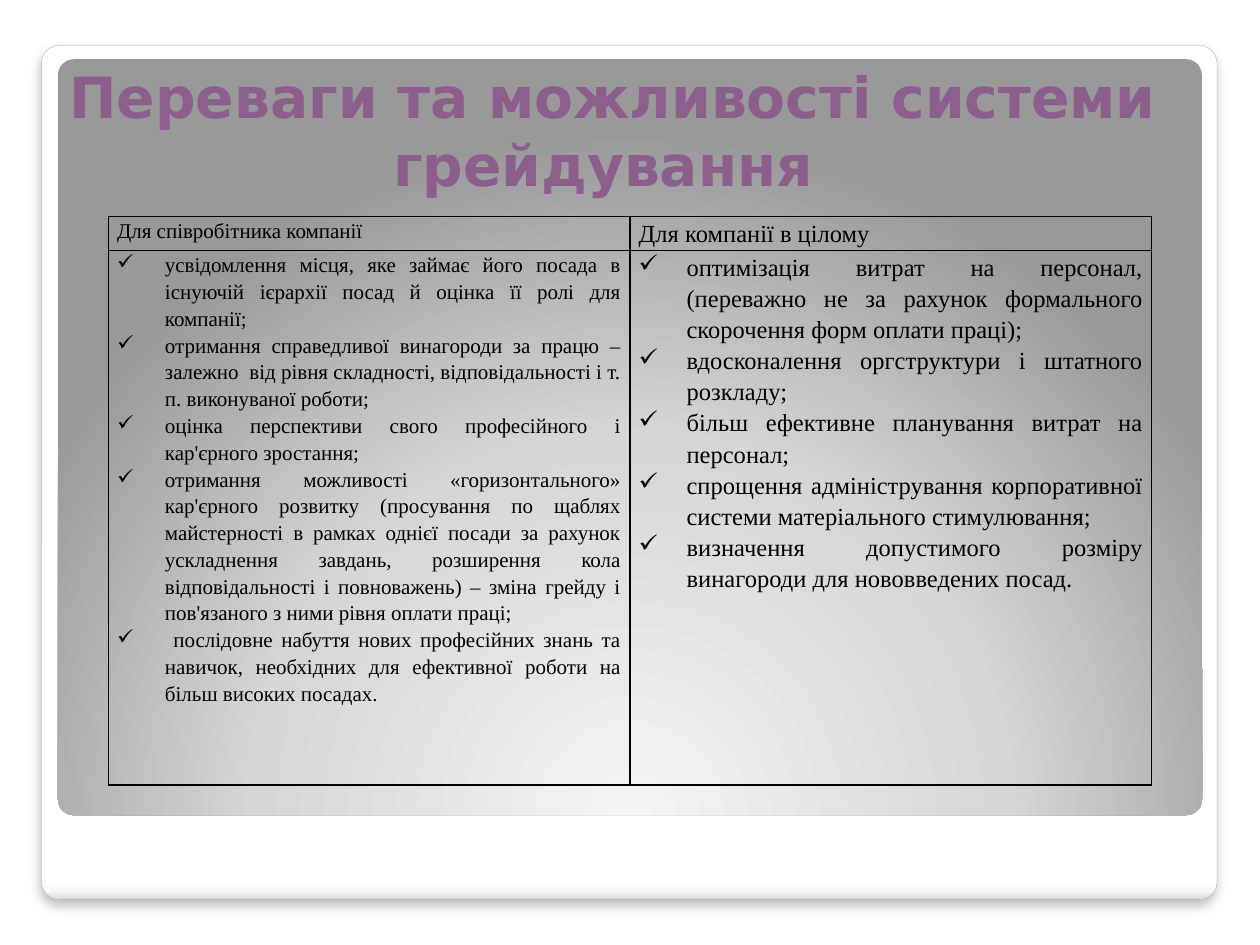
from lxml import etree
from pptx import Presentation
from pptx import util as u
from pptx.dml.color import RGBColor
from pptx.enum import shapes, text
from pptx.oxml import parse_xml
from pptx.oxml.ns import nsdecls, qn

TITLE = "Переваги та можливості системи грейдування "
COLUMNS = [
    {
        "heading": "Для співробітника компанії",
        "size": 12,
        "benefits": [
            "усвідомлення місця, яке займає його посада в існуючій ієрархії посад й оцінка її ролі для компанії; ",
            "отримання справедливої винагороди за працю – залежно  від рівня складності, відповідальності і т. п. виконуваної роботи;",
            "оцінка перспективи свого професійного і кар'єрного зростання;",
            "отримання можливості «горизонтального» кар'єрного розвитку (просування по щаблях майстерності в рамках однієї посади за рахунок ускладнення завдань, розширення кола відповідальності і повноважень) – зміна грейду і пов'язаного з ними рівня оплати праці;",
            " послідовне набуття нових професійних знань та навичок, необхідних для ефективної роботи на більш високих посадах.",
        ],
    },
    {
        "heading": "Для компанії в цілому",
        "size": 14,
        "benefits": [
            "оптимізація витрат на персонал, (переважно не за рахунок формального скорочення форм оплати праці); ",
            "вдосконалення оргструктури і штатного розкладу; ",
            "більш ефективне планування витрат на персонал; ",
            "спрощення адміністрування корпоративної системи матеріального стимулювання; ",
            "визначення допустимого розміру винагороди для нововведених посад.",
        ],
    },
]
PANELS = [
    {
        "at": (0.33, 0.36, 9.33, 6.78),
        "stops": [(0, "FFFFFF"), (98, "FFFFFF"), (99, "F7F7F7"), (100, "DADADA")],
        "direction": '<a:lin ang="5400000" scaled="0"/>',
        "outline": "A4A4A4",
    },
    {
        "at": (0.46, 0.47, 9.08, 6),
        "stops": [(0, "F5F5F5"), (55, "D6D6D6"), (100, "999999")],
        "direction": '<a:path path="circle"><a:fillToRect l="50000" t="175000" r="50000" b="-75000"/></a:path>',
        "outline": None,
    },
]
SHADOW = (
    f'<a:effectLst {nsdecls("a")}><a:outerShdw blurRad="{u.Pt(6)}" dist="{u.Pt(4)}" dir="5400000" '
    'algn="t" rotWithShape="0"><a:srgbClr val="000000"><a:alpha val="25000"/></a:srgbClr>'
    "</a:outerShdw></a:effectLst>"
)
ROW_HEIGHTS = [0.25, 4.24]
COLUMN_WIDTH = 4.14
INDENT = u.Inches(0.38)


def color(value):
    return RGBColor.from_string(value)


def inches(values):
    return [u.Inches(value) for value in values]


def apply(target, formats):
    for name, value in formats.items():
        setattr(target, name, value)


def write(paragraph, words, size, font, ink, bold=False):
    run = paragraph.add_run()
    run.text = words
    apply(run.font, {"size": u.Pt(size), "name": font, "bold": bold})
    run.font.color.rgb = color(ink)


def add_panel(slide, panel):
    card = slide.shapes.add_shape(shapes.MSO_SHAPE.ROUNDED_RECTANGLE, *inches(panel["at"]))
    card.adjustments[0] = 0.021
    card.shadow.inherit = False
    properties = card._element.spPr
    stops = "".join(
        f'<a:gs pos="{position * 1000}"><a:srgbClr val="{shade}"/></a:gs>'
        for position, shade in panel["stops"]
    )
    gradient = parse_xml(
        f'<a:gradFill {nsdecls("a")} rotWithShape="1"><a:gsLst>{stops}</a:gsLst>{panel["direction"]}</a:gradFill>'
    )
    properties.find(qn("a:prstGeom")).addnext(gradient)
    if panel["outline"]:
        card.line.color.rgb = color(panel["outline"])
        card.line.width = u.Pt(0.16)
        properties.replace(properties.find(qn("a:effectLst")), parse_xml(SHADOW))
    else:
        card.line.fill.background()


def add_borders(cell):
    properties = cell._tc.get_or_add_tcPr()
    for index, side in enumerate(("lnL", "lnR", "lnT", "lnB")):
        border = parse_xml(
            f'<a:{side} {nsdecls("a")} w="{u.Pt(1)}"><a:solidFill><a:srgbClr val="000000"/></a:solidFill></a:{side}>'
        )
        properties.insert(index, border)


def fill_cell(cell, lines, size, bulleted):
    apply(cell, {
        "margin_left": u.Inches(0.07), "margin_right": u.Inches(0.07),
        "margin_top": 0, "margin_bottom": 0,
    })
    cell.fill.background()
    add_borders(cell)
    frame = cell.text_frame
    for index, line in enumerate(lines):
        paragraph = frame.add_paragraph() if index else frame.paragraphs[0]
        paragraph.line_spacing = 1.15
        if bulleted:
            paragraph.alignment = text.PP_ALIGN.JUSTIFY
            properties = paragraph._p.get_or_add_pPr()
            properties.set("marL", str(INDENT))
            properties.set("indent", str(-INDENT))
            etree.SubElement(properties, qn("a:buChar")).set("char", "✓")
        write(paragraph, line, size, "Times New Roman", "000000")


def add_title(slide):
    frame = slide.shapes.add_textbox(*inches((0.39, 0.47, 8.95, 1.15))).text_frame
    apply(frame, {"word_wrap": True, "vertical_anchor": text.MSO_ANCHOR.BOTTOM})
    heading = frame.paragraphs[0]
    heading.alignment = text.PP_ALIGN.CENTER
    write(heading, TITLE, 32.4, "DejaVu Sans", "8C5E8C", True)


def add_benefits(slide):
    area = (0.86, 1.72, COLUMN_WIDTH * len(COLUMNS), sum(ROW_HEIGHTS))
    table = slide.shapes.add_table(len(ROW_HEIGHTS), len(COLUMNS), *inches(area)).table
    apply(table, {"first_row": False, "horz_banding": False})
    for row, height in zip(table.rows, ROW_HEIGHTS):
        row.height = u.Inches(height)
    for index, column in enumerate(COLUMNS):
        table.columns[index].width = u.Inches(COLUMN_WIDTH)
        fill_cell(table.cell(0, index), [column["heading"]], column["size"], False)
        fill_cell(table.cell(1, index), column["benefits"], column["size"], True)


def main():
    deck = Presentation()
    apply(deck, {"slide_width": u.Inches(10), "slide_height": u.Inches(7.5)})
    slide = deck.slides.add_slide(deck.slide_layouts[6])
    for panel in PANELS:
        add_panel(slide, panel)
    add_title(slide)
    add_benefits(slide)
    deck.save("out.pptx")


if __name__ == "__main__":
    main()
